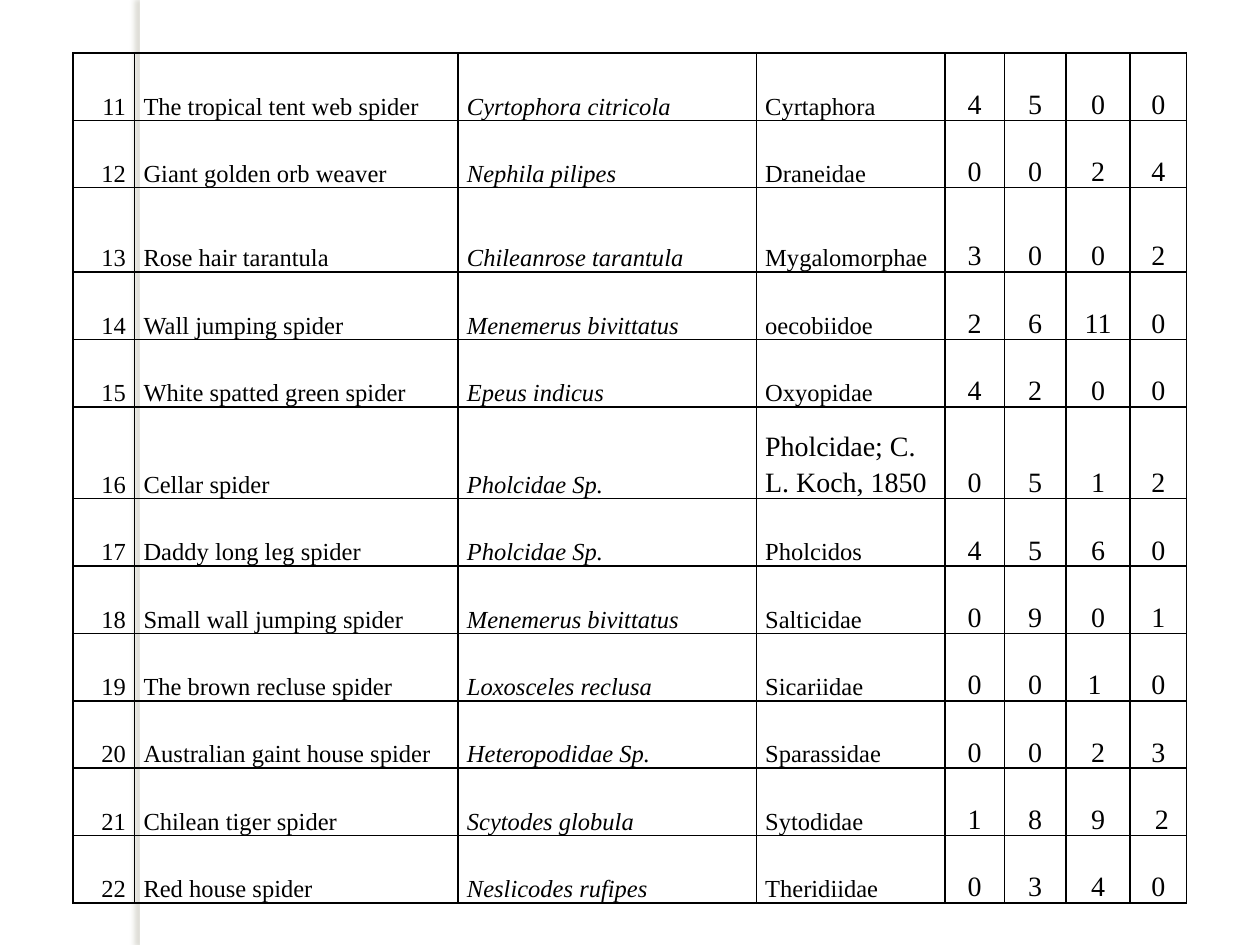
"""Build a slide with a table of spider species and their counts at four sites."""
from dataclasses import dataclass

from lxml.etree import SubElement
from pptx import Presentation
from pptx.dml.color import RGBColor
from pptx.enum.shapes import MSO_SHAPE as Shape
from pptx.enum.text import MSO_ANCHOR as Anchor, PP_ALIGN as Align
from pptx.oxml import parse_xml
from pptx.oxml.ns import nsdecls, qn
from pptx.util import Inches, Pt


@dataclass(frozen=True)
class Theme:
    font: str = "Times New Roman"
    ink: str = "000000"
    paper: str = "FFFFFF"
    shadow: str = "7F7D63"
    label_size: int = 14
    count_size: int = 16
    line_spacing: float = 1.15
    border: float = 1


theme = Theme()
spiders = [
    ("11", "The tropical tent web spider", "Cyrtophora citricola", "Cyrtaphora", "4", "5", "0", "0"),
    ("12", "Giant golden orb weaver", "Nephila pilipes", "Draneidae", "0", "0", "2", "4"),
    ("13", "Rose hair tarantula", "Chileanrose tarantula", "Mygalomorphae", "3", "0", "0", "2"),
    ("14", "Wall jumping spider", "Menemerus bivittatus", "oecobiidoe", "2", "6", "11", "0"),
    ("15", "White spatted green spider", "Epeus indicus", "Oxyopidae", "4", "2", "0", "0"),
    ("16", "Cellar spider", "Pholcidae Sp.", "Pholcidae; C. L. Koch, 1850", "0", "5", "1", "2"),
    ("17", "Daddy long leg spider", "Pholcidae Sp.", "Pholcidos", "4", "5", "6", "0"),
    ("18", "Small wall jumping spider", "Menemerus bivittatus", "Salticidae", "0", "9", "0", "1"),
    ("19", "The brown recluse spider", "Loxosceles reclusa", "Sicariidae", "0", "0", "1 ", "0"),
    ("20", "Australian gaint house spider", "Heteropodidae Sp.", "Sparassidae", "0", "0", "2", "3"),
    ("21", "Chilean tiger spider", "Scytodes globula", "Sytodidae", "1", "8", "9", " 2"),
    ("22", "Red house spider", "Neslicodes rufipes", "Theridiidae", "0", "3", "4", "0"),
]
column_widths = [0.49, 2.57, 2.37, 1.5, 0.47, 0.49, 0.51, 0.45]
tall_rows = {"13": 0.67, "16": 0.73}
alignments = [Align.RIGHT] + [Align.LEFT] * 3 + [Align.CENTER] * 4
scientific_column, family_column = 2, 3
table_width, table_height = 8.84, 6.75
common_height = (table_height - sum(tall_rows.values())) / (len(spiders) - len(tall_rows))


def add_borders(cell):
    """Draw a solid line on each side of a table cell."""
    properties = cell._tc.get_or_add_tcPr()
    for position, side in enumerate(("lnL", "lnR", "lnT", "lnB")):
        properties.insert(position, parse_xml(
            f'<a:{side} {nsdecls("a")} w="{Pt(theme.border)}"><a:solidFill>'
            f'<a:srgbClr val="{theme.ink}"/></a:solidFill></a:{side}>'))


presentation = Presentation()
presentation.slide_width, presentation.slide_height = Inches(10), Inches(7.5)
slide = presentation.slides.add_slide(presentation.slide_layouts[6])

strip = slide.shapes.add_shape(
    Shape.RECTANGLE, Inches(1.11), 0, Inches(0.08), presentation.slide_height)
strip.fill.solid()
strip.fill.fore_color.rgb = RGBColor.from_string(theme.paper)
strip.line.fill.background()
strip.shadow.inherit = False
effects = strip._element.spPr.find(qn("a:effectLst"))
outer_shadow = SubElement(effects, qn("a:outerShdw"), blurRad=str(Pt(3)), dist=str(Pt(3)),
                          dir=str(180 * 60000), algn="tl", rotWithShape="0")
shadow_color = SubElement(outer_shadow, qn("a:srgbClr"), val=theme.shadow)
SubElement(shadow_color, qn("a:alpha"), val="25000")

table = slide.shapes.add_table(
    len(spiders), len(column_widths), Inches(0.58), Inches(0.42),
    Inches(table_width), Inches(table_height)).table
table.first_row = table.horz_banding = False
for column, width in zip(table.columns, column_widths):
    column.width = Inches(table_width * width / sum(column_widths))

for row_index, spider in enumerate(spiders):
    table.rows[row_index].height = Inches(tall_rows.get(spider[0], common_height))
    for column_index, text in enumerate(spider):
        cell = table.cell(row_index, column_index)
        cell.fill.background()
        add_borders(cell)
        cell.vertical_anchor = Anchor.BOTTOM
        cell.margin_left = cell.margin_right = Inches(0.07)
        cell.margin_top = cell.margin_bottom = 0
        paragraph = cell.text_frame.paragraphs[0]
        paragraph.alignment = alignments[column_index]
        paragraph.line_spacing = theme.line_spacing
        run = paragraph.add_run()
        run.text = text
        large = column_index > family_column or text.startswith("Pholcidae;")
        run.font.size = Pt(theme.count_size if large else theme.label_size)
        run.font.name = theme.font
        run.font.italic = column_index == scientific_column
        run.font.color.rgb = RGBColor.from_string(theme.ink)

presentation.save("out.pptx")
